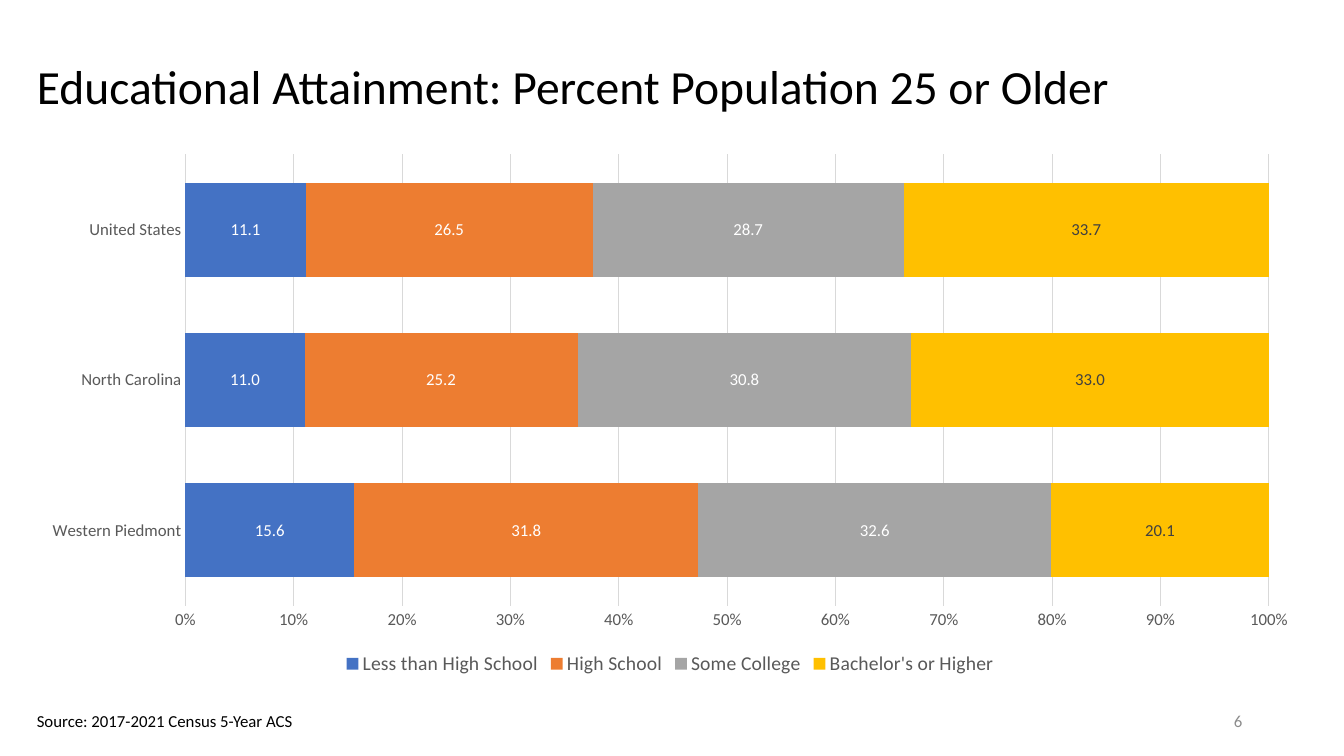
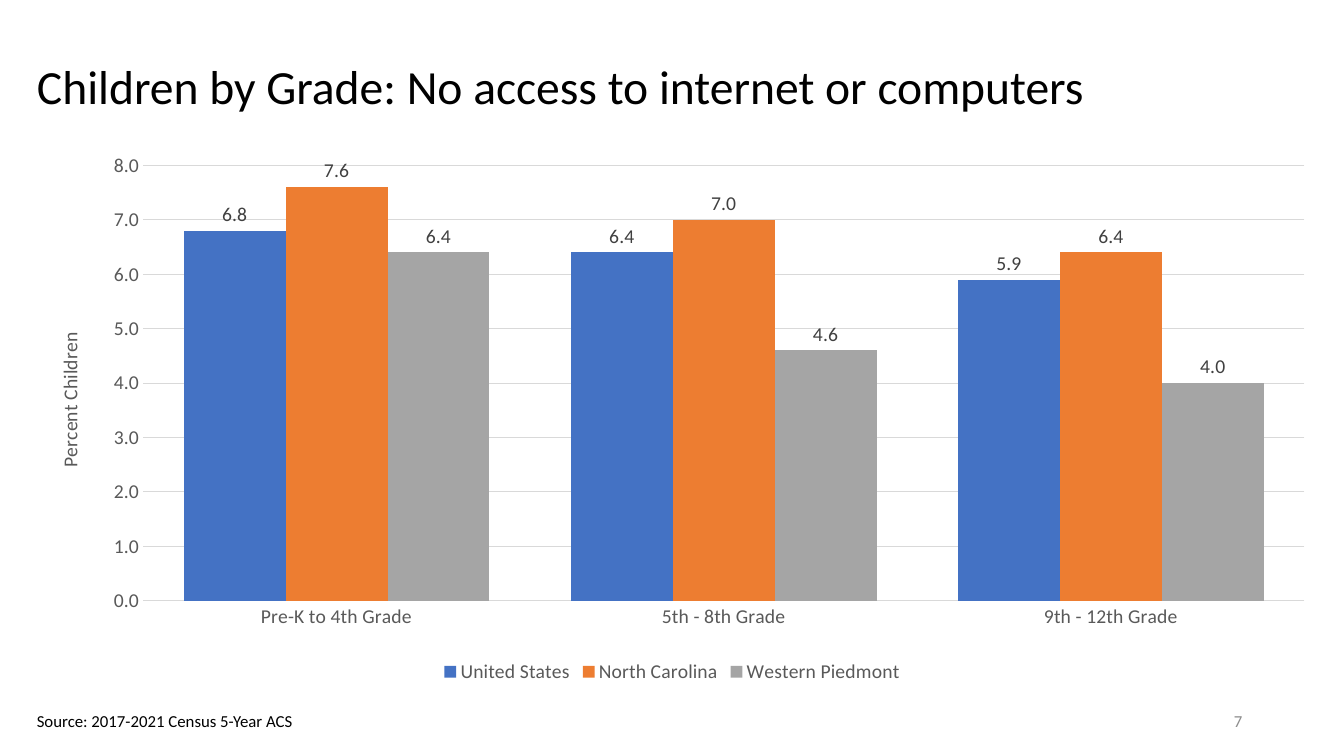
from lxml.etree import SubElement
from pptx import Presentation
from pptx.chart.data import CategoryChartData
from pptx.dml.color import RGBColor
from pptx.enum.chart import XL_CHART_TYPE, XL_LABEL_POSITION, XL_LEGEND_POSITION, XL_TICK_MARK
from pptx.enum.text import MSO_ANCHOR, MSO_AUTO_SIZE, PP_ALIGN
from pptx.oxml.ns import qn
from pptx.util import Inches, Pt

FONT = "Calibri"
BLACK = RGBColor(0x00, 0x00, 0x00)
WHITE = RGBColor(0xFF, 0xFF, 0xFF)
DARK = RGBColor(0x40, 0x40, 0x40)
TEXT_GRAY = RGBColor(0x59, 0x59, 0x59)
NUMBER_GRAY = RGBColor(0x8C, 0x8C, 0x8C)
GRID_GRAY = RGBColor(0xD9, 0xD9, 0xD9)
SERIES_COLORS = [
    RGBColor(0x44, 0x72, 0xC4),
    RGBColor(0xED, 0x7D, 0x31),
    RGBColor(0xA5, 0xA5, 0xA5),
    RGBColor(0xFF, 0xC0, 0x00),
]
SOURCE = "Source: 2017-2021 Census 5-Year ACS"
FIRST_NUMBER = 6
ONE_DECIMAL = "#,##0.0"

SLIDES = [
    {
        "title": "Educational Attainment: Percent Population 25 or Older",
        "type": XL_CHART_TYPE.BAR_STACKED_100,
        "size": (12.76, 5.32),
        "categories": ["Western Piedmont", "North Carolina", "United States"],
        "series": {
            "Less than High School": [15.6, 11, 11.1],
            "High School": [31.8, 25.2, 26.5],
            "Some College": [32.6, 30.8, 28.7],
            "Bachelor's or Higher": [20.1, 33, 33.7],
        },
        "gap": 60, "overlap": 100, "text_size": 12,
        "label_colors": [WHITE, WHITE, WHITE, DARK],
        "label_position": XL_LABEL_POSITION.CENTER,
        "axis_format": "0%", "axis_max": 1, "axis_step": 0.1,
    },
    {
        "title": "Children by Grade: No access to internet or computers",
        "type": XL_CHART_TYPE.COLUMN_CLUSTERED,
        "size": (12.8, 5.4),
        "categories": ["Pre-K to 4th Grade", "5th - 8th Grade", "9th - 12th Grade"],
        "series": {
            "United States": [6.8, 6.4, 5.9],
            "North Carolina": [7.6, 7, 6.4],
            "Western Piedmont": [6.4, 4.6, 4],
        },
        "gap": 80, "overlap": 0, "text_size": 14,
        "label_colors": [DARK, DARK, DARK],
        "label_position": XL_LABEL_POSITION.OUTSIDE_END,
        "axis_format": ONE_DECIMAL, "axis_max": 8, "axis_step": 1,
        "axis_title": "Percent Children",
        "axis_title_at": {"x": 0.02, "y": 0.34},
        "plot_at": {"x": 0.09, "y": 0.04, "w": 0.9, "h": 0.8},
    },
]


def style(font, size, color):
    font.name, font.size, font.bold = FONT, Pt(size), False
    font.color.rgb = color


def place(parent, index, shares):
    """Give a chart part a manual layout, in shares of the chart's size."""
    for old in parent.findall(qn("c:layout")):
        parent.remove(old)
    layout = SubElement(parent, qn("c:layout"))
    parent.insert(index, layout)
    manual = SubElement(layout, qn("c:manualLayout"))
    if "w" in shares:
        SubElement(manual, qn("c:layoutTarget")).set("val", "inner")
    for key in "xy":
        SubElement(manual, qn(f"c:{key}Mode")).set("val", "edge")
    for key, share in shares.items():
        SubElement(manual, qn(f"c:{key}")).set("val", str(share))


prs = Presentation()
prs.slide_width, prs.slide_height = Inches(13.33), Inches(7.5)
W, H = prs.slide_width, prs.slide_height
LEFT = int(W * 0.02)
CHART_TOP = int(H * 0.19)

for number, content in enumerate(SLIDES, FIRST_NUMBER):
    s = prs.slides.add_slide(prs.slide_layouts[5])

    title = s.shapes.title
    title.left, title.top = LEFT, int(H * 0.045)
    title.width, title.height = Inches(12.76), CHART_TOP - title.top
    tf = title.text_frame
    tf.text = content["title"]
    tf.auto_size, tf.vertical_anchor = MSO_AUTO_SIZE.NONE, MSO_ANCHOR.MIDDLE
    p = tf.paragraphs[0]
    p.alignment, p.line_spacing = PP_ALIGN.LEFT, 0.9
    style(p.runs[0].font, 34, BLACK)

    # Chart
    data = CategoryChartData(number_format=ONE_DECIMAL)
    data.categories = content["categories"]
    for name, values in content["series"].items():
        data.add_series(name, values)
    width, height = content["size"]
    chart = s.shapes.add_chart(content["type"], LEFT, CHART_TOP,
                               Inches(width), Inches(height), data).chart
    size = content["text_size"]
    style(chart.font, size, TEXT_GRAY)
    chart.has_title = False
    chart.has_legend = True
    chart.legend.position = XL_LEGEND_POSITION.BOTTOM
    chart.legend.include_in_layout = False
    style(chart.legend.font, 14, TEXT_GRAY)

    plot = chart.plots[0]
    plot.gap_width, plot.overlap = content["gap"], content["overlap"]
    plot.vary_by_categories = False
    for series, fill, color in zip(plot.series, SERIES_COLORS, content["label_colors"]):
        series.format.fill.solid()
        series.format.fill.fore_color.rgb = fill
        series.invert_if_negative = False
        labels = series.data_labels
        labels.show_value = True
        labels.number_format, labels.number_format_is_linked = ONE_DECIMAL, False
        labels.position = content["label_position"]
        style(labels.font, size, color)

    cat_axis, val_axis = chart.category_axis, chart.value_axis
    for axis in (cat_axis, val_axis):
        axis.major_tick_mark = axis.minor_tick_mark = XL_TICK_MARK.NONE
        style(axis.tick_labels.font, size, TEXT_GRAY)
    val_axis.has_major_gridlines = True
    for line in (cat_axis.format.line, val_axis.major_gridlines.format.line):
        line.color.rgb, line.width = GRID_GRAY, Pt(0.75)
    val_axis.format.line.fill.background()
    val_axis.minimum_scale, val_axis.maximum_scale = 0, content["axis_max"]
    val_axis.major_unit = content["axis_step"]
    val_axis.tick_labels.number_format = content["axis_format"]
    val_axis.tick_labels.number_format_is_linked = False

    if "axis_title" in content:
        tf = val_axis.axis_title.text_frame
        tf.text = content["axis_title"]
        style(tf.paragraphs[0].runs[0].font, size, TEXT_GRAY)
        tf_body = tf._txBody.bodyPr
        tf_body.set("rot", "-5400000")
        tf_body.set("vert", "horz")
        place(val_axis.axis_title._element, 1, content["axis_title_at"])
    if "plot_at" in content:
        place(chart._chartSpace.chart.plotArea, 0, content["plot_at"])

    # Footer: source on the left, slide number on the right
    for text, x, y, w, h, color, align in (
        (SOURCE, LEFT, 7, 2.78, 0.3, BLACK, PP_ALIGN.LEFT),
        (str(number), Inches(9.42), 6.95, 3, 0.4, NUMBER_GRAY, PP_ALIGN.RIGHT),
    ):
        tf = s.shapes.add_textbox(x, Inches(y), Inches(w), Inches(h)).text_frame
        tf.text = text
        tf.word_wrap = align == PP_ALIGN.RIGHT
        tf.vertical_anchor = MSO_ANCHOR.MIDDLE
        tf.paragraphs[0].alignment = align
        style(tf.paragraphs[0].runs[0].font, 12, color)

prs.save("out.pptx")
